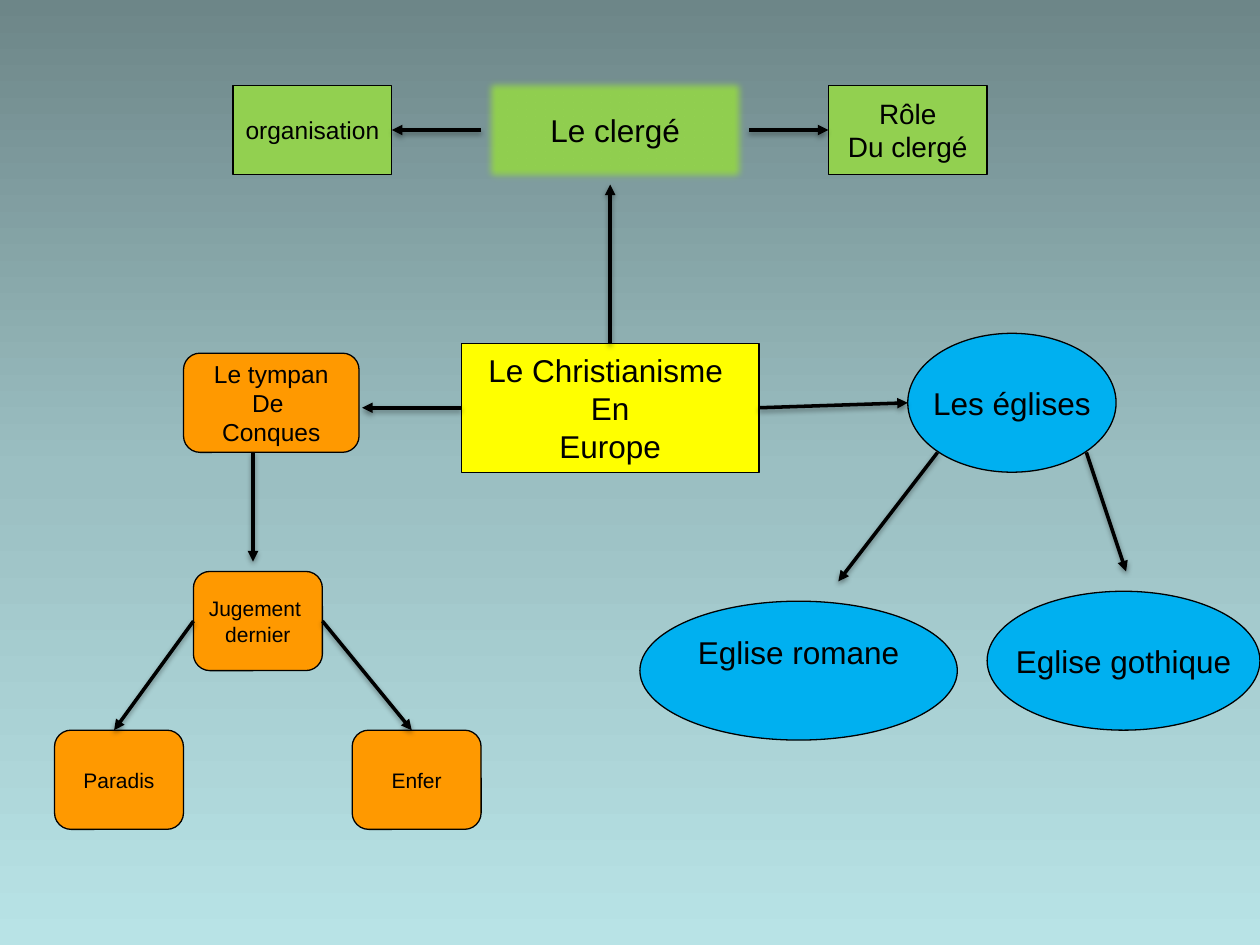
from copy import deepcopy

from lxml import etree
from pptx import Presentation
from pptx.dml.color import RGBColor
from pptx.enum.shapes import MSO_CONNECTOR, MSO_SHAPE
from pptx.enum.text import MSO_ANCHOR, PP_ALIGN
from pptx.oxml.ns import qn
from pptx.util import Cm, Inches, Pt

RECT = MSO_SHAPE.RECTANGLE
ROUND = MSO_SHAPE.ROUNDED_RECTANGLE
OVAL = MSO_SHAPE.OVAL
LINE = MSO_CONNECTOR.STRAIGHT
CENTER = PP_ALIGN.CENTER
MIDDLE = MSO_ANCHOR.MIDDLE
YELLOW, ORANGE, BLUE, GREEN = "FFFF00", "FF9900", "00B0F0", "92D050"
CELL = 0.2


def hue(code):
    return RGBColor.from_string(code)


def node(base, tag, **attrs):
    return etree.SubElement(base, qn(tag), {k: str(v) for k, v in attrs.items()})


class Map:
    font = "Arial"
    ink = "000000"
    left, top = 0.5, 0.6

    def __init__(self, slide):
        self.slide = slide

    def spot(self, col, row):
        return Cm((col + self.left) * CELL), Cm((row + self.top) * CELL)

    def back(self, *codes):
        fill = self.slide.background.fill
        fill.gradient()
        fill.gradient_angle = 270
        group = self.slide.element.find(".//" + qn("a:gsLst"))
        group.insert(1, deepcopy(group[0]))
        for i, (stop, code) in enumerate(zip(fill.gradient_stops, codes)):
            stop.position = i / (len(codes) - 1)
            stop.color.rgb = hue(code)

    def box(self, kind, col, row, wide, high, fill, size, text, soft=0, foot=0.05):
        shape = self.slide.shapes.add_shape(
            kind, *self.spot(col, row), Cm(wide * CELL), Cm(high * CELL))
        shape.shadow.inherit = False
        shape.fill.solid()
        shape.fill.fore_color.rgb = hue(fill)
        shape.line.color.rgb = hue(self.ink)
        shape.line.width = Pt(0.75)
        if soft:
            edge = shape.element.spPr.find(qn("a:effectLst"))
            node(edge, "a:softEdge", rad=Pt(soft))
        frame = shape.text_frame
        frame.word_wrap = False
        frame.vertical_anchor = MIDDLE
        frame.margin_bottom = Inches(foot)
        frame.text = text
        for para in frame.paragraphs:
            para.alignment = CENTER
            para.font.name = self.font
            para.font.size = Pt(size)
            para.font.color.rgb = hue(self.ink)

    def arrow(self, *ends):
        line = self.slide.shapes.add_connector(
            LINE, *self.spot(*ends[:2]), *self.spot(*ends[2:]))
        line.line.color.rgb = hue(self.ink)
        line.line.width = Pt(2)
        node(line.line._get_or_add_ln(), "a:tailEnd", type="triangle")
        glow = node(line.element.spPr, "a:effectLst")
        shade = node(glow, "a:outerShdw", blurRad=Pt(3.1), dist=Pt(1.6),
                     dir=5400000, rotWithShape=0)
        tint = node(shade, "a:srgbClr", val=self.ink)
        node(tint, "a:alpha", val=38000)


def main():
    deck = Presentation()
    deck.slide_width, deck.slide_height = Inches(10), Inches(7.5)
    board = Map(deck.slides.add_slide(deck.slide_layouts[6]))
    board.back("6D8688", "9BBFC2", "B8E3E6")

    board.box(RECT, 46, 34, 30, 13, YELLOW, 18, "Le Christianisme \nEn\nEurope")

    board.box(ROUND, 18, 35, 17.7, 10, ORANGE, 14, "Le tympan\nDe \nConques")
    for col, row, text in (
        (19, 57, "Jugement \ndernier"),
        (35, 73, "Enfer"),
        (5, 73, "Paradis"),
    ):
        board.box(ROUND, col, row, 13, 10, ORANGE, 12, text)

    for col, row, wide, text, foot in (
        (91, 33, 21, "Les églises", 0.05),
        (64, 60, 32, "Eglise romane", 0.34),
        (99, 59, 27.5, "Eglise gothique", 0.05),
    ):
        board.box(OVAL, col, row, wide, 14, BLUE, 18, text, foot=foot)

    board.box(RECT, 48, 7, 27, 11, GREEN, 18, "Le clergé", soft=5)
    board.box(RECT, 23, 8, 16, 9, GREEN, 14, "organisation")
    board.box(RECT, 83, 8, 16, 9, GREEN, 16, "Rôle\nDu clergé")

    for ends in (
        (46, 40.5, 36, 40.5),
        (25, 45, 25, 56),
        (19, 62, 11, 73),
        (32, 62, 41, 73),
        (76, 40.5, 91, 40),
        (94, 45, 84, 58),
        (109, 45, 113, 57),
        (48, 12.5, 39, 12.5),
        (75, 12.5, 83, 12.5),
        (61, 34, 61, 18),
    ):
        board.arrow(*ends)

    deck.save("out.pptx")


if __name__ == "__main__":
    main()
